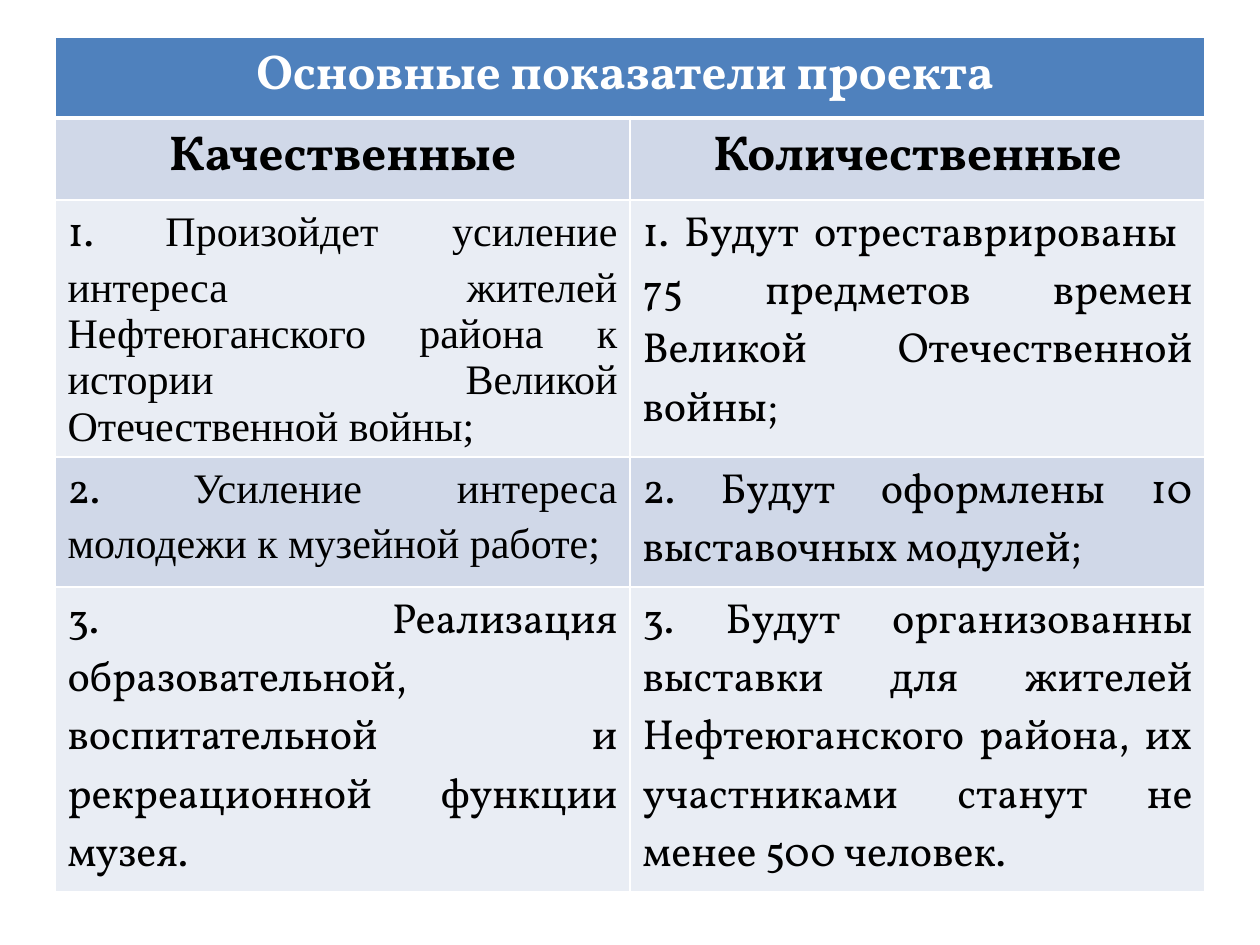
from dataclasses import dataclass
from lxml import etree
from pptx import Presentation
from pptx.dml.color import RGBColor
from pptx.enum.text import PP_ALIGN
from pptx.oxml.ns import qn
from pptx.util import Pt

CENTER, JUSTIFY = PP_ALIGN.CENTER, PP_ALIGN.JUSTIFY
PX = 914400 / 126


@dataclass(frozen=True)
class Theme:
    """Colours, fonts and type sizes."""
    head: str = "4F81BD"
    dark: str = "D0D8E8"
    light: str = "E9EDF4"
    white: str = "FFFFFF"
    black: str = "000000"
    font: str = "Vollkorn"
    serif: str = "Times New Roman"
    title: int = 28
    body: int = 24


THEME = Theme()
TITLE = "Основные показатели проекта "
HEADS = ("Качественные", "Количественные")
ITEMS = (
    (("1. ", "Произойдет усиление интереса жителей Нефтеюганского района "
      "к истории Великой Отечественной войны;"),
     ("1. Будут отреставрированы  75 предметов времен Великой "
      "Отечественной войны;",)),
    (("2. ", "Усиление интереса молодежи к музейной работе;"),
     ("2. Будут оформлены 10 выставочных модулей;",)),
    (("3. Реализация образовательной, воспитательной и рекреационной "
      "функции музея.",),
     ("3. Будут организованны выставки для жителей Нефтеюганского района, "
      "их участниками станут не менее 500 человек.",)),
)
ROWS = (78, 82, 257, 130, 304)


def emu(px):
    """Turn px into EMU."""
    return round(px * PX)


def edge(cell, tag, width):
    """Draw one white border of a cell."""
    line = etree.SubElement(cell._tc.get_or_add_tcPr(), qn(f"a:{tag}"), w=str(Pt(width)))
    fill = etree.SubElement(line, qn("a:solidFill"))
    etree.SubElement(fill, qn("a:srgbClr"), val=THEME.white)


def paint(cell, fill, base):
    """Give a cell its borders and fill."""
    for tag, width in (("lnL", 1), ("lnR", 1), ("lnT", 1), ("lnB", base)):
        edge(cell, tag, width)
    cell.fill.solid()
    cell.fill.fore_color.rgb = RGBColor.from_string(fill)


def write(cell, parts, size, ink, bold, align):
    """Write a cell's text, the part after a number in the serif font."""
    para = cell.text_frame.paragraphs[0]
    para.alignment = align
    fonts = [para.font]
    for part, name in zip(parts, (THEME.font, THEME.serif)):
        run = para.add_run()
        run.text = part
        if len(parts) > 1:
            run.font.name = name
    if len(parts) == 1:
        para.font.name = THEME.font
    for font in fonts:
        font.size = Pt(size)
        font.bold = bold
        font.color.rgb = RGBColor.from_string(ink)


def grid(slide, left, top, width):
    """Place the table of project indicators."""
    cols = len(HEADS)
    frame = slide.shapes.add_table(len(ROWS), cols, emu(left), emu(top),
                                   emu(width), emu(sum(ROWS)))
    table = frame.table
    for row, height in zip(table.rows, ROWS):
        row.height = emu(height)
    table.cell(0, 0).merge(table.cell(0, cols - 1))
    for col in range(cols):
        paint(table.cell(0, col), THEME.head, 3)
    write(table.cell(0, 0), (TITLE,), THEME.title, THEME.white, True, CENTER)
    body = (tuple((head,) for head in HEADS), *ITEMS)
    for num, row in enumerate(body, 1):
        first = num == 1
        for col, parts in enumerate(row):
            cell = table.cell(num, col)
            paint(cell, THEME.dark if num % 2 else THEME.light, 1)
            write(cell, parts, THEME.title if first else THEME.body,
                  THEME.black, first, CENTER if first else JUSTIFY)


def main():
    """Build and save the slide."""
    deck = Presentation()
    deck.slide_width, deck.slide_height = emu(1260), emu(945)
    slide = deck.slides.add_slide(deck.slide_layouts[6])
    grid(slide, 55, 37, 1150)
    deck.save("out.pptx")


if __name__ == "__main__":
    main()
